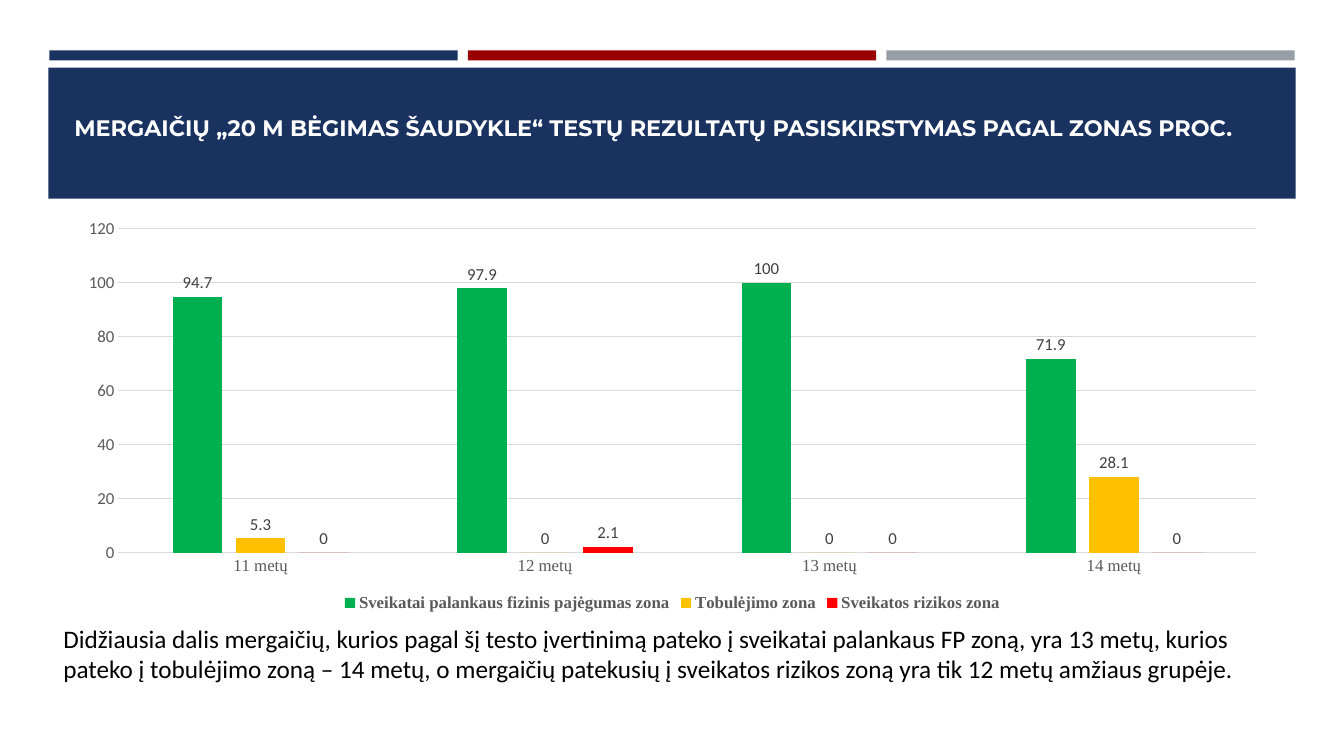
import pptx
import pptx.util
import pptx.dml.color
import pptx.chart.data
import pptx.enum.chart
import pptx.enum.shapes
import pptx.enum.text

theme = {
    "navy": "1A3260", "red": "990000", "gray": "969FA7",
    "white": "FFFFFF", "black": "000000",
    "grid": "D9D9D9", "axis": "595959", "label": "404040",
    "zones": ["00B050", "FFC000", "FF0000"],
    "head": "Montserrat", "body": "Calibri", "serif": "Times New Roman",
    "title": 16, "text": 18, "chart": 12,
}
inch = pptx.util.Inches
enum = pptx.enum.chart


def tint(name):
    return pptx.dml.color.RGBColor.from_string(theme.get(name, name))


def style(font, face, size, color, bold=False):
    looks = {"name": theme[face], "size": pptx.util.Pt(theme[size]), "bold": bold}
    for key, val in looks.items():
        setattr(font, key, val)
    font.color.rgb = tint(color)


deck = pptx.Presentation()
deck.slide_width, deck.slide_height = inch(13.33), inch(7.5)
slide = deck.slides.add_slide(deck.slide_layouts[6])

left, wide, gap = 0.49, 4.05, 0.1
bars = [(left + col * (wide + gap), 0.5, wide, 0.1, color)
        for col, color in enumerate(["navy", "red", "gray"])]
bars.append((0.48, 0.67, 12.37, 1.3, "navy"))
for *box, color in bars:
    bar = slide.shapes.add_shape(
        pptx.enum.shapes.MSO_SHAPE.RECTANGLE, *map(inch, box))
    bar.shadow.inherit = False
    bar.fill.solid()
    bar.fill.fore_color.rgb = tint(color)
    bar.line.fill.background()

pairs = {
    "Sveikatai palankaus fizinis pajėgumas zona": [94.7, 97.9, 100, 71.9],
    "Tobulėjimo zona": [5.3, 0, 0, 28.1],
    "Sveikatos rizikos zona": [0, 2.1, 0, 0],
}
data = pptx.chart.data.CategoryChartData()
data.categories = [f"{age} metų" for age in range(11, 15)]
for name, vals in pairs.items():
    data.add_series(name, vals)
chart = slide.shapes.add_chart(
    enum.XL_CHART_TYPE.COLUMN_CLUSTERED,
    *map(inch, (0.64, 2.09, 12.06, 4.02)), data).chart
style(chart.font, "body", "chart", "axis")
chart.has_title = False
chart.has_legend = True
chart.legend.position = enum.XL_LEGEND_POSITION.BOTTOM
chart.legend.include_in_layout = False
style(chart.legend.font, "serif", "chart", "axis", True)

plot = chart.plots[0]
for key, val in {"gap_width": 219, "overlap": -27, "vary_by_categories": False}.items():
    setattr(plot, key, val)
for row, color in zip(plot.series, theme["zones"]):
    row.format.fill.solid()
    row.format.fill.fore_color.rgb = tint(color)
    row.invert_if_negative = False
    tags = row.data_labels
    tags.show_value = True
    tags.position = enum.XL_LABEL_POSITION.OUTSIDE_END
    style(tags.font, "body", "chart", "label")

cats, vals = chart.category_axis, chart.value_axis
for axis, face in [(cats, "serif"), (vals, "body")]:
    axis.major_tick_mark = axis.minor_tick_mark = enum.XL_TICK_MARK.NONE
    style(axis.tick_labels.font, face, "chart", "axis")
for key, val in {"minimum_scale": 0, "maximum_scale": 120, "major_unit": 20}.items():
    setattr(vals, key, val)
vals.format.line.fill.background()
for line in [cats.format.line, vals.major_gridlines.format.line]:
    line.color.rgb = tint("grid")
    line.width = pptx.util.Pt(0.75)

anchor = pptx.enum.text.MSO_ANCHOR
notes = [
    ((0.64, 0.61, 12.06, 1.11), anchor.BOTTOM, 0.32,
     ("head", "title", "white", True),
     "MERGAIČIŲ „20 M BĖGIMAS ŠAUDYKLE“ TESTŲ REZULTATŲ PASISKIRSTYMAS PAGAL ZONAS PROC."),
    ((0.53, 5.93, 12.06, 1.47), anchor.MIDDLE, 0.42,
     ("body", "text", "black"),
     "Didžiausia dalis mergaičių, kurios pagal šį testo įvertinimą pateko į sveikatai "
     "palankaus FP zoną, yra 13 metų, kurios pateko į tobulėjimo zoną – 14 metų, o "
     "mergaičių patekusių į sveikatos rizikos zoną yra tik 12 metų amžiaus grupėje."),
]
for box, hold, inset, look, words in notes:
    frame = slide.shapes.add_textbox(*map(inch, box)).text_frame
    form = {"word_wrap": True, "vertical_anchor": hold, "margin_bottom": inch(inset)}
    for key, val in form.items():
        setattr(frame, key, val)
    run = frame.paragraphs[0].add_run()
    run.text = words
    style(run.font, *look)

deck.save("out.pptx")
